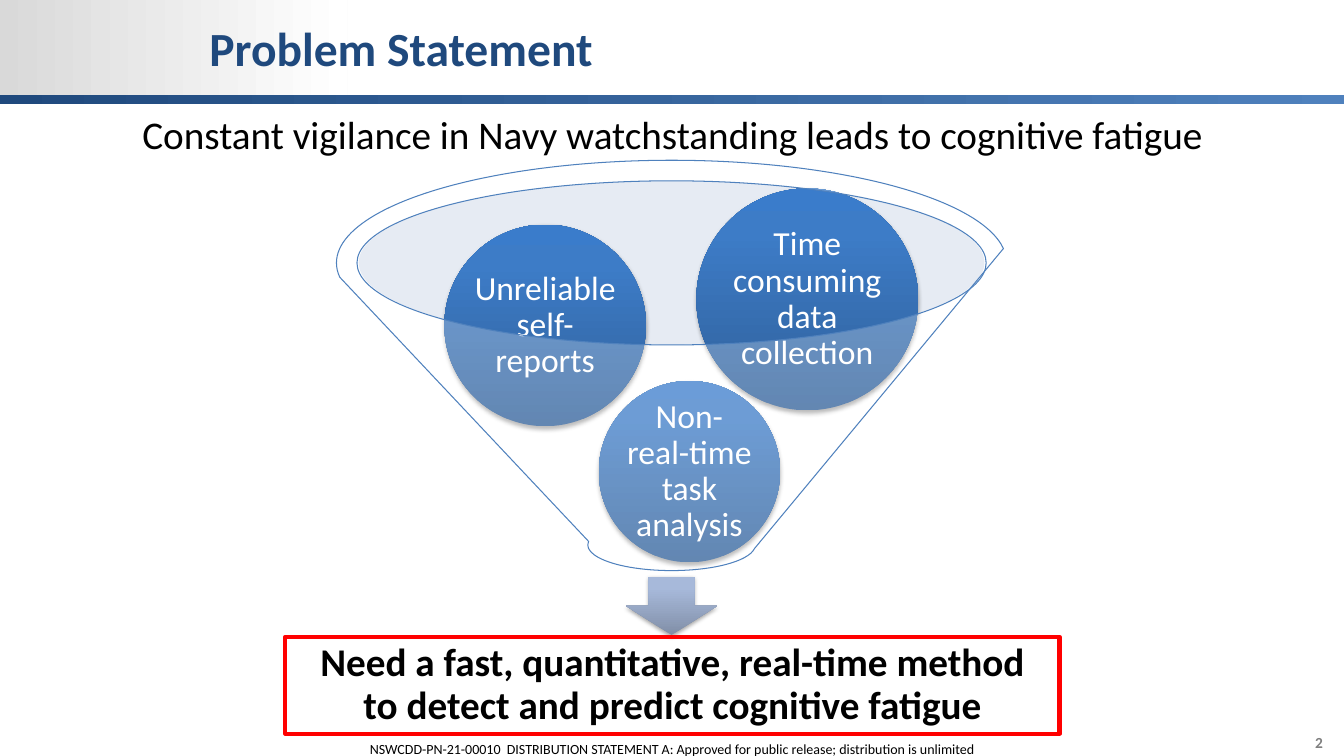
from dataclasses import dataclass

from lxml.etree import SubElement
from pptx import Presentation
from pptx.dml.color import RGBColor
from pptx.enum.shapes import MSO_SHAPE
from pptx.enum.text import MSO_ANCHOR, PP_ALIGN
from pptx.oxml.ns import qn
from pptx.util import Cm, Pt


@dataclass(frozen=True)
class Theme:
    font: str = "Calibri"
    navy: str = "1F497D"
    blue: str = "4F81BD"
    white: str = "FFFFFF"
    black: str = "000000"
    gray: str = "808080"
    red: str = "FF0000"
    funnel_mouth: str = "C2CDE1"
    corner_stops: tuple = ((0, "D9D9D9"), (100, "FFFFFF"))
    band_stops: tuple = ((0, "1F497D"), (100, "4F81BD"))
    ball_stops: tuple = ((0, "2F5F99"), (80, "3D7CC7"), (100, "3A7CCB"))
    arrow_stops: tuple = ((0, "818FA8"), (80, "A7B9DA"), (100, "A7BADC"))
    title_size: int = 34
    statement_size: int = 28
    ball_size: int = 24
    number_size: int = 11
    footer_size: int = 10


THEME = Theme()
SLIDE_WIDTH = 33.87
SLIDE_HEIGHT = 19.05


def write_text(shape, text, size, color, bold=False, align=PP_ALIGN.CENTER,
               anchor=MSO_ANCHOR.MIDDLE, insets=(0.25, 0.13, 0.25, 0.13),
               line_spacing=None):
    frame = shape.text_frame
    frame.word_wrap = True
    frame.vertical_anchor = anchor
    (frame.margin_left, frame.margin_top,
     frame.margin_right, frame.margin_bottom) = map(Cm, insets)
    paragraph = frame.paragraphs[0]
    paragraph.text = text
    paragraph.alignment = align
    paragraph.line_spacing = line_spacing
    font = paragraph.font
    font.name, font.size, font.bold = THEME.font, Pt(size), bold
    font.color.rgb = RGBColor.from_string(color)


def add_label(slide, box, text, **text_format):
    write_text(slide.shapes.add_textbox(*map(Cm, box)), text, **text_format)


def add_plain_shape(slide, kind, box, line_color=None, line_width=0.75):
    shape = slide.shapes.add_shape(kind, *map(Cm, box))
    shape.shadow.inherit = False
    shape.fill.background()
    if line_color:
        shape.line.color.rgb = RGBColor.from_string(line_color)
        shape.line.width = Pt(line_width)
    else:
        shape.line.fill.background()
    return shape


def add_color(parent, color, opacity=100):
    element = SubElement(parent, qn("a:srgbClr"), val=color)
    if opacity < 100:
        SubElement(element, qn("a:alpha"), val=str(opacity * 1000))


def fill_translucent(shape, color, opacity):
    shape.fill.solid()
    shape.fill.fore_color.rgb = RGBColor.from_string(color)
    color_element = shape.element.spPr.find(qn("a:solidFill"))[0]
    SubElement(color_element, qn("a:alpha"), val=str(opacity * 1000))


def fill_gradient(shape, stops, angle=0):
    shape.fill.gradient()
    shape.fill.gradient_angle = angle
    stop_list = shape.element.spPr.find(qn("a:gradFill")).find(qn("a:gsLst"))
    stop_list.clear()
    for position, color in stops:
        add_color(SubElement(stop_list, qn("a:gs"), pos=str(position * 1000)), color)


def add_shadow(shape):
    effects = shape.element.spPr.find(qn("a:effectLst"))
    shadow = SubElement(effects, qn("a:outerShdw"), blurRad=str(Pt(3.1)),
                        dist=str(Pt(1.8)), dir="5400000", rotWithShape="0")
    add_color(shadow, THEME.black, opacity=35)


def add_raised_shape(slide, kind, box, stops):
    shape = add_plain_shape(slide, kind, box)
    fill_gradient(shape, stops, angle=90)
    add_shadow(shape)
    return shape


def add_ball(slide, left, top, diameter, text):
    ball = add_raised_shape(slide, MSO_SHAPE.OVAL, (left, top, diameter, diameter),
                            THEME.ball_stops)
    write_text(ball, text, THEME.ball_size, THEME.white,
               insets=(0, 0, 0, 0), line_spacing=0.9)


def add_frame(slide):
    # Header corner and band
    corner = add_plain_shape(slide, MSO_SHAPE.RECTANGLE, (0, 0, 8.76, 2.62))
    fill_gradient(corner, THEME.corner_stops)
    band = add_plain_shape(slide, MSO_SHAPE.RECTANGLE, (0, 2.39, SLIDE_WIDTH, 0.23))
    fill_gradient(band, THEME.band_stops)

    # Page number and distribution statement
    add_label(slide, (28.85, 18.34, 5, 0.74), "2", size=THEME.number_size,
              color=THEME.gray, bold=True, align=PP_ALIGN.RIGHT,
              anchor=MSO_ANCHOR.TOP, insets=(0.25, 0.13, 0.51, 0.13))
    add_label(slide, (0, 18.52, SLIDE_WIDTH, 0.69),
              "NSWCDD-PN-21-00010  DISTRIBUTION STATEMENT A: "
              "Approved for public release; distribution is unlimited",
              size=THEME.footer_size, color=THEME.black, anchor=MSO_ANCHOR.TOP)


def add_funnel(slide):
    # Shaded mouth and outgoing arrow
    mouth = add_plain_shape(slide, MSO_SHAPE.OVAL, (9.04, 4.55, 15.77, 4.14))
    fill_translucent(mouth, THEME.funnel_mouth, 40)
    add_raised_shape(slide, MSO_SHAPE.DOWN_ARROW, (15.77, 14.53, 2.31, 1.47),
                     THEME.arrow_stops)

    # Problems inside the funnel
    for ball in (
        (15.09, 9.6, 4.57, "Non-real-time task analysis"),
        (11.2, 5.66, 5.08, "Unreliable self-reports"),
        (17.55, 4.75, 5.59, "Time consuming data collection"),
    ):
        add_ball(slide, *ball)

    # Translucent funnel in front of the balls
    funnel = add_plain_shape(slide, MSO_SHAPE.FUNNEL, (8.48, 4.04, 16.89, 10.34),
                             line_color=THEME.blue)
    fill_translucent(funnel, THEME.white, 25)


def add_conclusion(slide):
    box = add_plain_shape(slide, MSO_SHAPE.RECTANGLE, (7.19, 16.05, 19.51, 2.44),
                          line_color=THEME.red, line_width=3)
    write_text(box, "Need a fast, quantitative, real-time method "
               "to detect and predict cognitive fatigue",
               THEME.statement_size, THEME.black, bold=True,
               insets=(0.56, 0.56, 0.56, 0.56), line_spacing=0.9)


def main():
    presentation = Presentation()
    presentation.slide_width = Cm(SLIDE_WIDTH)
    presentation.slide_height = Cm(SLIDE_HEIGHT)
    slide = presentation.slides.add_slide(presentation.slide_layouts[6])

    add_frame(slide)

    # Title and lead statement
    add_label(slide, (5.03, 0.33, 28.17, 1.73), "Problem Statement",
              size=THEME.title_size, color=THEME.navy, bold=True,
              align=PP_ALIGN.LEFT)
    add_label(slide, (3.1, 2.64, 27.69, 1.57),
              "Constant vigilance in Navy watchstanding leads to cognitive fatigue",
              size=THEME.statement_size, color=THEME.black, anchor=MSO_ANCHOR.TOP)

    add_funnel(slide)
    add_conclusion(slide)
    presentation.save("out.pptx")


if __name__ == "__main__":
    main()
